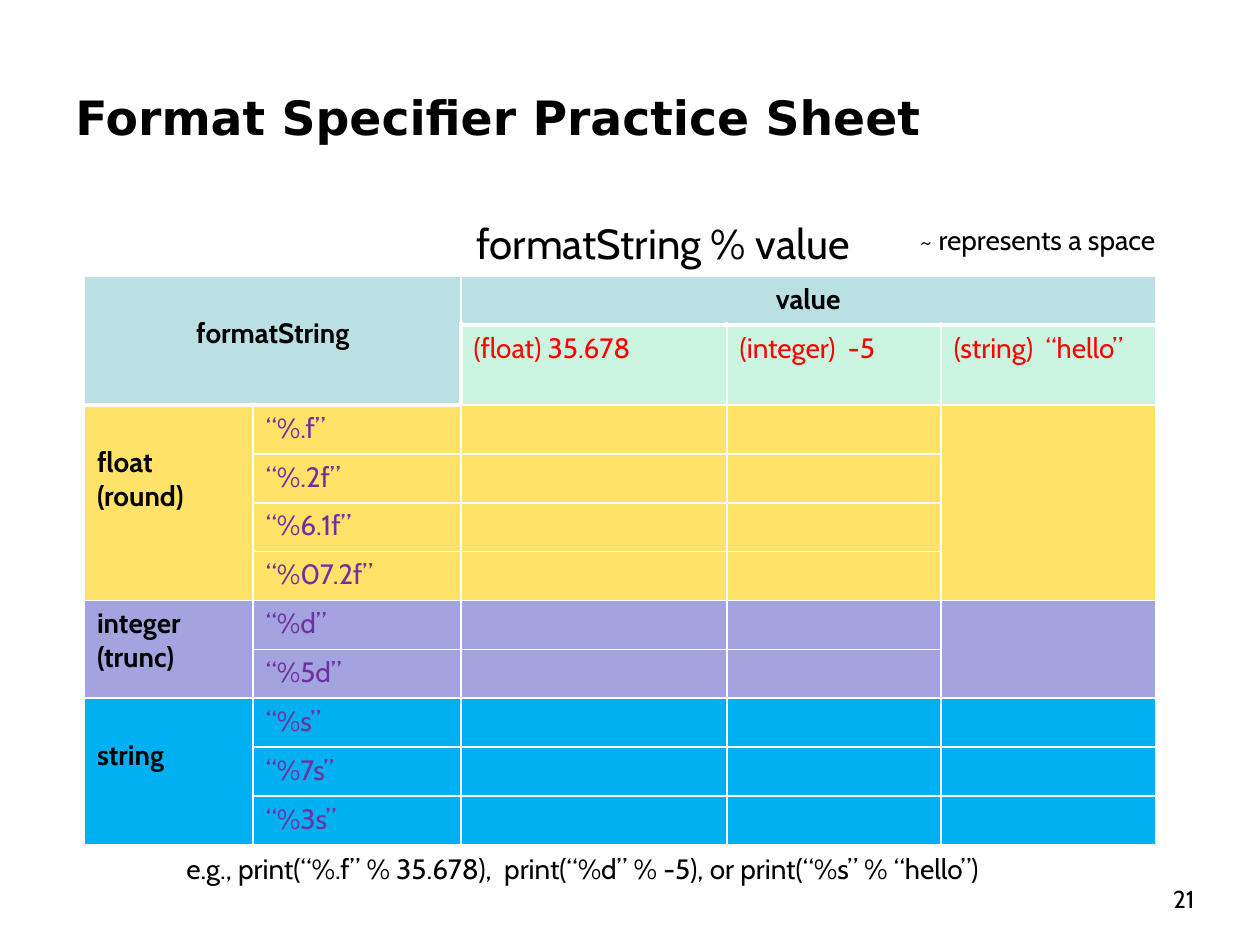
from lxml.etree import SubElement
from pptx import Presentation
from pptx.dml.color import RGBColor
from pptx.enum.text import MSO_ANCHOR, PP_ALIGN
from pptx.oxml.ns import qn
from pptx.util import Inches, Pt

BLACK, WHITE, RED, PURPLE = "000000", "FFFFFF", "FF0000", "7030A0"
HEADER, SUBHEADER = "BBE0E3", "CBF5E1"
COLUMN_WIDTHS = [1.34, 1.65, 2.11, 1.7, 1.7]
VALUES = ["(float) 35.678", "(integer)  -5", "(string)  “hello”"]
# label lines, fill, label's top margin, formats, whether the string column is merged
GROUPS = [
    (["float", "(round)"], "FFE267", 0.32,
     ["“%.f”", "“%.2f”", "“%6.1f”", "“%07.2f”"], True),
    (["integer", "(trunc)"], "A3A3E0", 0.05, ["“%d”", "“%5d”"], True),
    (["string"], "00B0F0", 0.32, ["“%s”", "“%7s”", "“%3s”"], False),
]


def color(hex_value):
    return RGBColor.from_string(hex_value)


def write(frame, lines, size=16, font="Cabin", ink=BLACK, bold=False,
          align=PP_ALIGN.LEFT):
    """Fill a text frame with one paragraph for each line."""
    for index, line in enumerate(lines):
        paragraph = frame.paragraphs[0] if index == 0 else frame.add_paragraph()
        paragraph.alignment = align
        run = paragraph.add_run()
        run.text = line
        run.font.size = Pt(size)
        run.font.name = font
        run.font.bold = bold
        run.font.color.rgb = color(ink)


class SlideBuilder:
    def __init__(self, presentation):
        self.slide = presentation.slides.add_slide(presentation.slide_layouts[6])

    def text(self, line, left, top, width, height, anchor=MSO_ANCHOR.TOP,
             wrap=True, **style):
        box = self.slide.shapes.add_textbox(
            Inches(left), Inches(top), Inches(width), Inches(height))
        box.text_frame.word_wrap = wrap
        box.text_frame.vertical_anchor = anchor
        write(box.text_frame, [line], **style)

    def table(self, left, top, column_widths, row_heights):
        grid = self.slide.shapes.add_table(
            len(row_heights), len(column_widths), Inches(left), Inches(top),
            Inches(sum(column_widths)), Inches(sum(row_heights))).table
        grid.first_row = grid.horz_banding = False
        for column, width in zip(grid.columns, column_widths):
            column.width = Inches(width)
        for row, height in zip(grid.rows, row_heights):
            row.height = Inches(height)
        return grid

    def cell(self, cell, fill, thick=""):
        """Draw white borders, 3 pt on the thick sides, and fill the cell."""
        properties = cell._tc.get_or_add_tcPr()
        for side in "LRTB":
            width = Pt(3 if side in thick else 1)
            line = SubElement(properties, qn(f"a:ln{side}"), w=str(width))
            SubElement(SubElement(line, qn("a:solidFill")), qn("a:srgbClr"), val=WHITE)
        cell.fill.solid()
        cell.fill.fore_color.rgb = color(fill)
        cell.margin_top = cell.margin_bottom = 0

    def cell_text(self, cell, lines, top=0.05, **style):
        cell.margin_top, cell.margin_bottom = Inches(top), Inches(0.05)
        write(cell.text_frame, lines, **style)


def thick_sides(row, column):
    """Sides of a cell that touch the lower edge of the header."""
    if column < 2:
        return {0: "B", 1: "BR", 2: "T"}.get(row, "")
    return {0: "B", 1: "TL" if column == 2 else "T"}.get(row, "")


def header_fill(row, column):
    return SUBHEADER if row == 1 and column >= 2 else HEADER


def main():
    presentation = Presentation()
    presentation.slide_width, presentation.slide_height = Inches(10), Inches(7.5)
    builder = SlideBuilder(presentation)

    # Title
    builder.text("Format Specifier Practice Sheet", 0.5, 0.3, 7, 1.25,
                 anchor=MSO_ANCHOR.MIDDLE, size=27, font="DejaVu Sans", bold=True)

    # Table grid and fills
    small_row = (4.51 - 0.63) / 10
    grid = builder.table(0.67, 2.19, COLUMN_WIDTHS,
                         [small_row, 0.63] + [small_row] * 9)
    body_fills = [fill for _, fill, _, formats, _ in GROUPS for _ in formats]
    for row in range(len(grid.rows)):
        for column in range(len(grid.columns)):
            fill = header_fill(row, column) if row < 2 else body_fills[row - 2]
            builder.cell(grid.cell(row, column), fill, thick_sides(row, column))

    # Header
    grid.cell(0, 0).merge(grid.cell(1, 1))
    grid.cell(0, 2).merge(grid.cell(0, 4))
    builder.cell_text(grid.cell(0, 0), ["formatString"], top=0.32, bold=True,
                      align=PP_ALIGN.CENTER)
    builder.cell_text(grid.cell(0, 2), ["value"], bold=True, align=PP_ALIGN.CENTER)
    for column, value in enumerate(VALUES, start=2):
        builder.cell_text(grid.cell(1, column), [value], ink=RED)

    # Format groups
    first = 2
    for label, _, label_top, formats, string_merged in GROUPS:
        last = first + len(formats) - 1
        grid.cell(first, 0).merge(grid.cell(last, 0))
        if string_merged:
            grid.cell(first, 4).merge(grid.cell(last, 4))
        builder.cell_text(grid.cell(first, 0), label, top=label_top, bold=True)
        for row, format_string in enumerate(formats, start=first):
            builder.cell_text(grid.cell(row, 1), [format_string], ink=PURPLE)
        first = last + 1

    # Page number and notes around the table
    builder.text("21", 7.5, 6.8, 2.08, 0.5, anchor=MSO_ANCHOR.BOTTOM, size=14,
                 align=PP_ALIGN.RIGHT)
    builder.text("formatString % value", 3.68, 1.68, 3.37, 0.51, wrap=False, size=24)
    builder.text("e.g., print(“%.f” % 35.678),  print(“%d” % -5), or print(“%s” % “hello”)",
                 1.38, 6.71, 7.45, 0.37, wrap=False)
    builder.text("~ represents a space", 7.2, 1.72, 2.39, 0.37)

    presentation.save("out.pptx")


if __name__ == "__main__":
    main()
